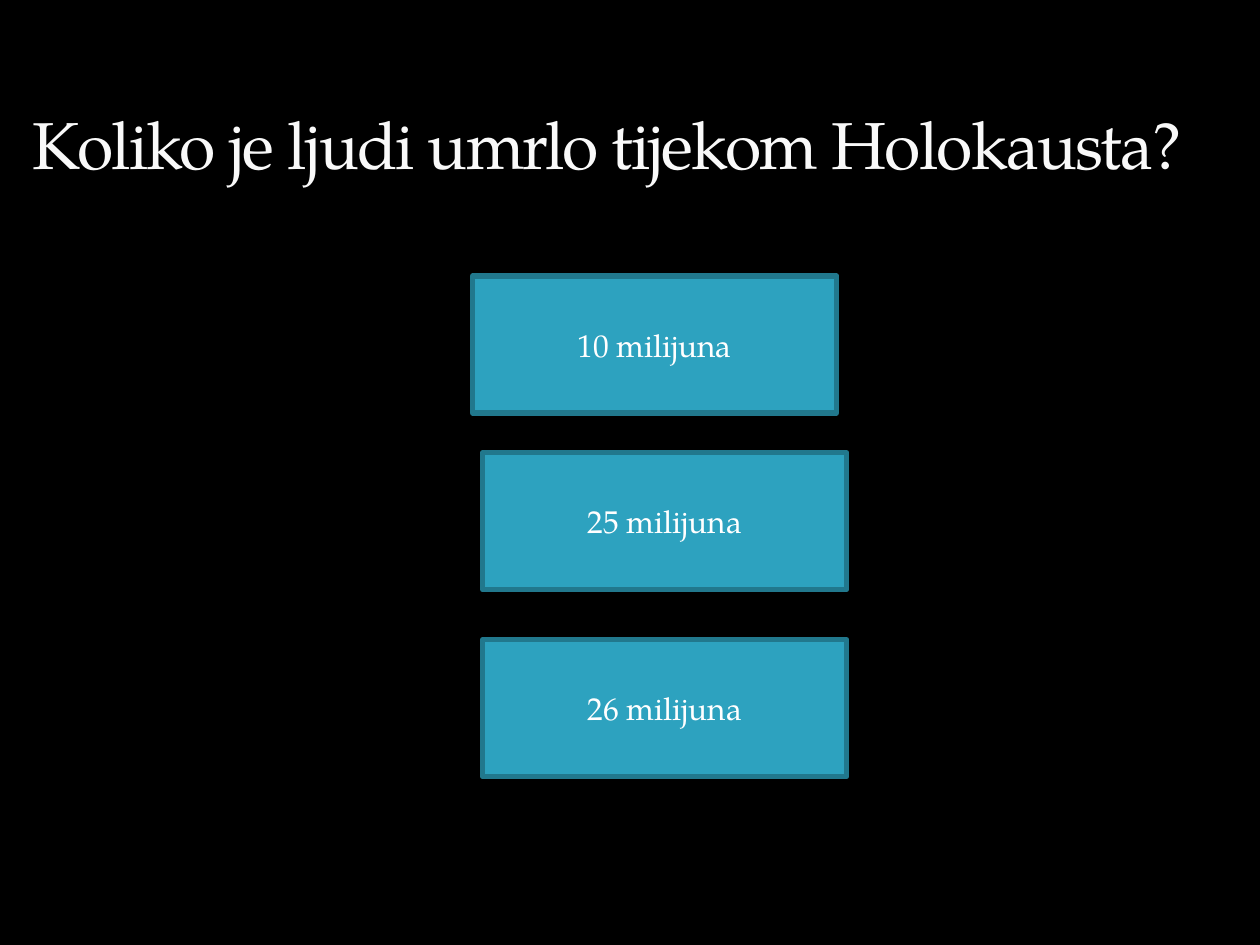
from typing import NamedTuple

from pptx import Presentation
from pptx.dml.color import RGBColor as Rgb
from pptx.enum.shapes import MSO_SHAPE as Kind
from pptx.enum.text import MSO_ANCHOR as Anchor, MSO_AUTO_SIZE as Fit, PP_ALIGN as Align
from pptx.util import Inches, Pt

WIDE, HIGH = Inches(10), Inches(7.5)
FONT = "TeX Gyre Pagella"
HUES = {"back": "000000", "title": "F9F9F9", "fill": "2DA2BF", "edge": "21788D", "text": "FFFFFF"}
FRAME = {"word_wrap": True, "auto_size": Fit.NONE}


class Box(NamedTuple):
    left: float
    top: float
    width: float
    height: float


class Choice(NamedTuple):
    text: str
    left: float
    top: float


HEAD = Box(0.016, 0.023, 0.934, 0.177)
SIZE = (0.289, 0.145)
CHOICES = [
    Choice("10 milijuna", 0.375, 0.292),
    Choice("25 milijuna", 0.383, 0.479),
    Choice("26 milijuna", 0.383, 0.677),
]


def hue(name: str) -> Rgb:
    return Rgb.from_string(HUES[name])


def apply(item, values: dict) -> None:
    for name, value in values.items():
        setattr(item, name, value)


def span(box: Box) -> dict:
    return {
        "left": int(box.left * WIDE),
        "top": int(box.top * HIGH),
        "width": int(box.width * WIDE),
        "height": int(box.height * HIGH),
    }


def write(shape, text: str, size: float, color: str, align: Align, anchor: Anchor):
    frame = shape.text_frame
    apply(frame, FRAME | {"vertical_anchor": anchor})
    para = frame.paragraphs[0]
    para.alignment = align
    run = para.add_run()
    run.text = text
    apply(run.font, {"name": FONT, "size": Pt(size)})
    run.font.color.rgb = hue(color)
    return run


def draw_head(slide, text: str) -> None:
    title = slide.shapes.title
    apply(title, span(HEAD))
    run = write(title, text, 37.8, "title", Align.LEFT, Anchor.BOTTOM)
    title.text_frame.margin_right = 0
    run.font._element.set("spc", "-100")


def draw_choice(slide, choice: Choice) -> None:
    area = span(Box(choice.left, choice.top, *SIZE))
    shape = slide.shapes.add_shape(Kind.RECTANGLE, **area)
    shape.shadow.inherit = False
    shape.fill.solid()
    shape.fill.fore_color.rgb = hue("fill")
    shape.line.color.rgb = hue("edge")
    shape.line.width = Pt(3)
    write(shape, choice.text, 18, "text", Align.CENTER, Anchor.MIDDLE)


def main() -> None:
    deck = Presentation()
    apply(deck, {"slide_width": WIDE, "slide_height": HIGH})
    slide = deck.slides.add_slide(deck.slide_layouts.get_by_name("Title Only"))
    back = slide.background.fill
    back.solid()
    back.fore_color.rgb = hue("back")
    draw_head(slide, "Koliko je ljudi umrlo tijekom Holokausta?")
    for choice in CHOICES:
        draw_choice(slide, choice)
    deck.save("out.pptx")


if __name__ == "__main__":
    main()
